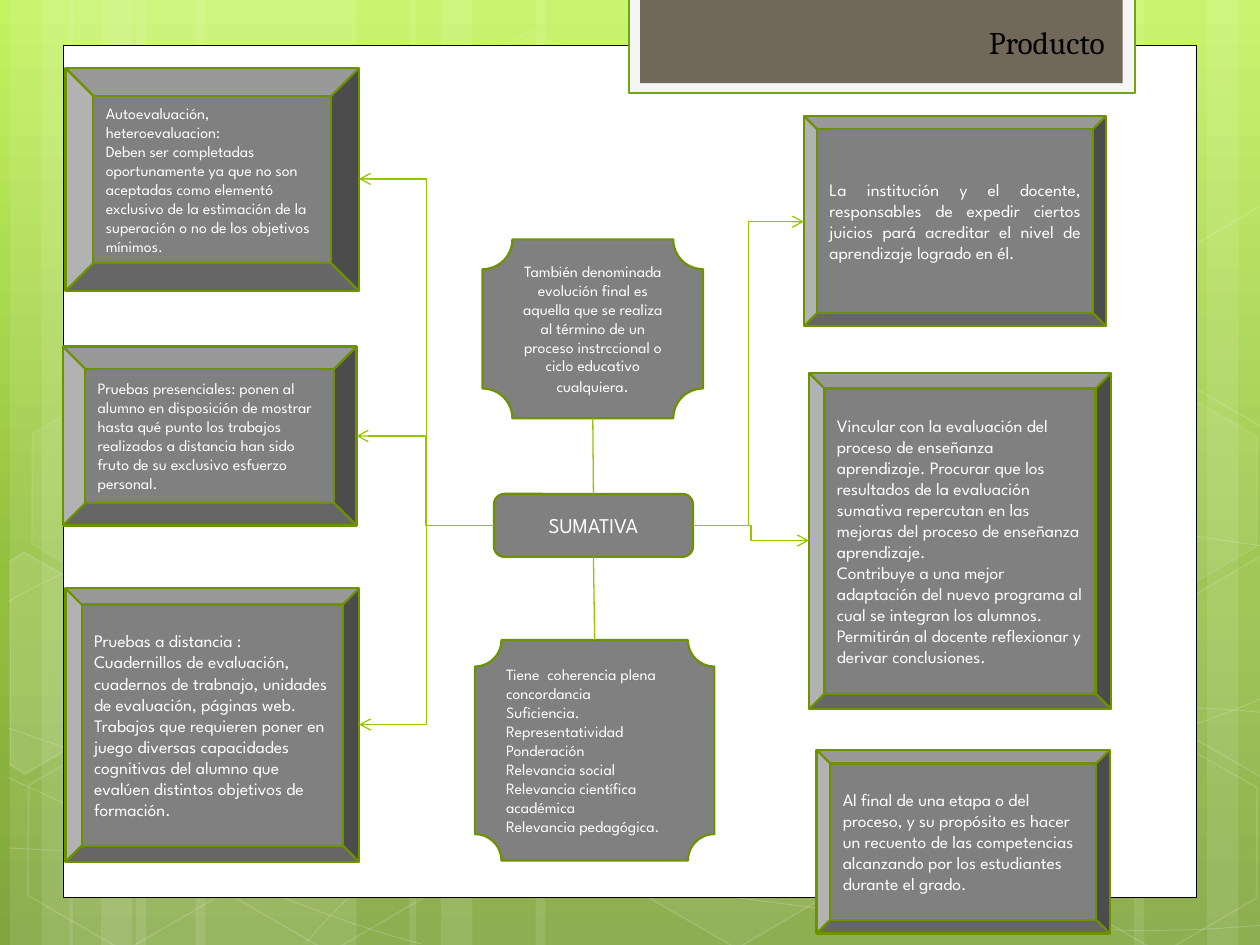
from copy import deepcopy
from math import cos, radians, sin
from lxml.etree import SubElement as Sub
from pptx import Presentation
from pptx.dml.color import RGBColor as RGB
from pptx.enum.shapes import MSO_CONNECTOR as Link, MSO_SHAPE as Kind
from pptx.enum.text import MSO_ANCHOR as Anchor, MSO_AUTO_SIZE as Fit, PP_ALIGN as Align
from pptx.oxml.ns import qn
from pptx.util import Inches, Pt

WHITE, GRAY, GREEN, LIME = "FFFFFF", "808080", "6D9200", "94C600"
SANS = "League Spartan"
TILT = 30

BANDS = [(1.08, 1.75), (0.08, 0.5), (0.33, 0.83), (1.55, 1.75), (0.55, 0.5), (0.8, 0.83),
         (7.33, 1.75), (9.58, 0.5), (9, 0.83), (4.25, 3.08), (3.25, 0.5), (3.5, 0.83)]

CURVES = [
    ([(0.07, 6.73), (0.61, 6.76), (1.15, 6.79), (1.9, 6.78), (2.65, 6.77), (3.58, 6.75),
      (4.58, 6.65), (5.58, 6.55), (7, 6.36), (7.92, 6.17), (8.83, 5.98), (9.77, 5.68),
      (10.07, 5.51)], None),
    ([(0.07, 4.77), (0.36, 4.61), (0.65, 4.46), (1.21, 4.31), (1.78, 4.16), (2.59, 3.94),
      (3.47, 3.87), (4.36, 3.8), (5.44, 3.79), (6.54, 3.87), (7.64, 3.95), (9.47, 4.26),
      (10.07, 4.34)], None),
    ([(0.06, 6.17), (1.27, 6.72), (2.47, 7.27), (3.34, 7.49)], None),
    ([(0.07, 5.78), (0.38, 5.89), (0.7, 6), (1.28, 6.16), (1.86, 6.31), (2.73, 6.56),
      (3.57, 6.73), (4.4, 6.9), (5.45, 7.08), (6.28, 7.18), (7.11, 7.29), (8, 7.33),
      (8.53, 7.36), (9.05, 7.4), (9.19, 7.38), (9.45, 7.38), (9.71, 7.37), (9.89, 7.35),
      (10.07, 7.34)], None),
    ([(2.42, 7.49), (2.6, 7.29), (2.78, 7.09), (3.02, 6.91), (3.26, 6.73), (3.6, 6.53),
      (3.88, 6.39), (4.16, 6.25), (4.33, 6.19), (4.7, 6.09), (5.06, 5.99), (5.73, 5.85),
      (6.08, 5.78), (6.44, 5.71), (6.49, 5.71), (6.8, 5.69), (7.11, 5.66), (7.6, 5.63),
      (7.94, 5.62), (8.29, 5.61), (8.86, 5.62), (8.86, 5.62), (9.53, 5.62), (9.71, 5.63),
      (9.88, 5.64), (9.97, 5.65), (10.06, 5.66), (10.03, 5.65), (10.06, 5.66)], 21),
]

HEXES = [(3.34, 0.36, 4, 8), (4.97, 5.89, 6, 12), (0.11, 5.91, None, 12), (0.14, 3.12, 7, 8),
         (1.74, 5.92, None, 12), (7.53, 4.53, 10, 12), (8.34, 5.93, None, 12),
         (8.34, 3.14, 7, 8)]

CUTS = [
    ((0.36, 5.35), [(0.08, 4.45), (0.19, 4.38), (0.96, 4.82), (0.95, 5.7), (0.2, 6.14),
                    (0.08, 6.07)], 10),
    ((9.85, 5.2), [(9.26, 4.85), (10.01, 4.41), (10.09, 4.46), (10.09, 6.13),
                   (10.02, 6.17), (9.26, 5.73)], 4),
    ((9.85, 2.41), [(9.26, 2.07), (10.01, 1.63), (10.1, 1.68), (10.09, 3.35),
                    (10.02, 3.39), (9.26, 2.95)], None),
]

BEVELS = [
    ((0.52, 0.54, 2.33, 1.77), 0.125, 9, [
        "Autoevaluación, heteroevaluacion:",
        "Deben ser completadas oportunamente ya que no son aceptadas como elementó exclusivo "
        "de la estimación de la superación o no de los objetivos mínimos."]),
    ((0.5, 2.75, 2.33, 1.42), 0.125, 9, [
        "Pruebas presenciales: ponen al alumno en disposición de mostrar hasta qué punto los "
        "trabajos realizados a distancia han sido fruto de su exclusivo esfuerzo personal."]),
    ((0.52, 4.67, 2.33, 2.17), 0.059, 10, [
        "Pruebas a distancia :",
        "Cuadernillos de evaluación, cuadernos de trabnajo, unidades de evaluación, páginas "
        "web. Trabajos que requieren poner en juego diversas capacidades cognitivas del "
        "alumno que evalúen distintos objetivos de formación."]),
    ((6.48, 5.95, 2.33, 1.46), 0.076, 10, [
        "Al final de una etapa o del proceso, y su propósito es hacer un recuento de las "
        "competencias alcanzando por los estudiantes durante el grado."]),
    ((6.42, 2.96, 2.4, 2.67), 0.052, 10, [
        "Vincular con la evaluación del proceso de enseñanza aprendizaje. Procurar que los "
        "resultados de la evaluación sumativa repercutan en las mejoras del proceso de "
        "enseñanza aprendizaje.",
        "Contribuye a una mejor adaptación del nuevo programa al cual se integran los alumnos.",
        "Permitirán al docente reflexionar y derivar conclusiones."]),
]
DUTY = ["La institución y el docente, responsables de expedir ciertos juicios pará acreditar "
        "el nivel de aprendizaje logrado en él."]
FINAL = ["También denominada evolución final es aquella que se realiza al término de un "
         "proceso instrccional o ciclo educativo cualquiera"]
TRAITS = ["Tiene  coherencia plena concordancia", "Suficiencia.", "Representatividad",
          "Ponderación", "Relevancia social", "Relevancia científica académica",
          "Relevancia pedagógica."]


def paint(fill, hue):
    fill.solid()
    fill.fore_color.rgb = RGB.from_string(hue)


def fade(node, pct):
    Sub(node.find(".//" + qn("a:srgbClr")), qn("a:alpha"), val=str(pct * 1000))


def dress(item, fill=None, line=None, width=1, clear=None, dim=None):
    item.shadow.inherit = False
    props = item._element.spPr
    if fill:
        paint(item.fill, fill)
        if clear:
            fade(props.find(qn("a:solidFill")), clear)
    else:
        item.fill.background()
    if line:
        paint(item.line.fill, line)
        item.line.width = Pt(width)
        if dim:
            fade(props.find(qn("a:ln")), dim)
    else:
        item.line.fill.background()
    return item


def shape(slide, kind, at, adj=(), **look):
    item = slide.shapes.add_shape(kind, *map(Inches, at))
    for i, val in enumerate(adj):
        item.adjustments[i] = val
    return dress(item, **look)


def trace(slide, dots, close, **look):
    dots = [(Inches(x), Inches(y)) for x, y in dots]
    pen = slide.shapes.build_freeform(*dots[0])
    pen.add_line_segments(dots[1:], close=close)
    return dress(pen.convert_to_shape(), **look)


def bend(item, flat):
    legs = list(item._element.iter(qn("a:lnTo")))
    if flat is not None:
        legs.pop(flat)
    for i in range(0, len(legs), 3):
        first, *rest = legs[i:i + 3]
        first.tag = qn("a:cubicBezTo")
        for leg in rest:
            first.append(leg[0])
            leg.getparent().remove(leg)


def turn(dots, mid, deg):
    c, s = cos(radians(deg)), sin(radians(deg))
    gaps = [(x - mid[0], y - mid[1]) for x, y in dots]
    return [(mid[0] + x * c - y * s, mid[1] + x * s + y * c) for x, y in gaps]


def style(run, size, face=SANS, hue=WHITE):
    for name, val in {"size": Pt(size), "name": face}.items():
        setattr(run.font, name, val)
    run.font.color.rgb = RGB.from_string(hue)


def write(item, paras, size, align=Align.LEFT, **look):
    frame = item.text_frame
    for name, val in {"word_wrap": True, "vertical_anchor": Anchor.MIDDLE}.items():
        setattr(frame, name, val)
    for i, text in enumerate(paras):
        para = frame.add_paragraph() if i else frame.paragraphs[0]
        para.alignment = align
        run = para.add_run()
        run.text = text
        style(run, size, **look)


def box(slide, kind, at, paras, size, align=Align.LEFT, adj=()):
    item = shape(slide, kind, at, adj, fill=GRAY, line=GREEN, width=1.25)
    write(item, paras, size, align)
    return item


def link(slide, kind, start, end, arrow=False):
    wire = slide.shapes.add_connector(kind, *map(Inches, start + end))
    wire.line.color.rgb = RGB.from_string(LIME)
    wire.line.width = Pt(0.75)
    props = wire._element.spPr
    if arrow:
        Sub(props.find(qn("a:ln")), qn("a:tailEnd"), type="arrow")
    Sub(props, qn("a:effectLst"))
    return wire


def scene(slide):
    fill = slide.background.fill
    fill.gradient()
    fill.gradient_angle = 270
    stops = slide._element.find(".//" + qn("a:gsLst"))
    stops.append(deepcopy(stops[0]))
    hues = [(0, "C3F35F"), (0.62, "93BF3F"), (1, "81A53E")]
    for stop, (pos, hue) in zip(fill.gradient_stops, hues):
        stop.position = pos
        stop.color.rgb = RGB.from_string(hue)
    for x, w in BANDS:
        shape(slide, Kind.RECTANGLE, (x, 0, w, 7.5), fill=WHITE, clear=10)
    for dots, flat in CURVES:
        bend(trace(slide, dots, False, line=WHITE, width=0.5, dim=20), flat)
    for x, y, clear, dim in HEXES:
        item = shape(slide, Kind.HEXAGON, (x, y, 1.75, 1.52), (0.285, 1.155),
                     fill=clear and WHITE, clear=clear, line=WHITE, dim=dim)
        item.rotation = TILT
    for mid, dots, clear in CUTS:
        item = trace(slide, turn(dots, mid, -TILT), True, fill=clear and WHITE, clear=clear,
                     line=WHITE, dim=12)
        item.rotation = TILT
    shape(slide, Kind.RECTANGLE, (0.5, 0.36, 9, 6.76), fill=WHITE, line="000000", width=0.5)
    shape(slide, Kind.RECTANGLE, (4.99, -0.02, 4.02, 0.76), fill="F5F5F5", line="74A510",
          width=1.25)
    shape(slide, Kind.RECTANGLE, (5.08, -0.02, 3.83, 0.68), fill="71685A")


def main():
    deck = Presentation()
    deck.slide_width, deck.slide_height = Inches(10), Inches(7.5)
    slide = deck.slides.add_slide(deck.slide_layouts[6])
    scene(slide)
    hub = box(slide, Kind.ROUNDED_RECTANGLE, (3.92, 3.92, 1.58, 0.5), ["SUMATIVA"], 12,
              Align.CENTER)
    top = box(slide, Kind.PLAQUE, (3.83, 1.9, 1.75, 1.42), FINAL, 9, Align.CENTER)
    dot = top.text_frame.paragraphs[0].add_run()
    dot.text = "."
    style(dot, 10)
    low = box(slide, Kind.PLAQUE, (3.77, 5.08, 1.9, 1.75), TRAITS, 9, adj=[0.12])
    for at, adj, size, paras in BEVELS:
        box(slide, Kind.BEVEL, at, paras, size, adj=[adj])
    box(slide, Kind.BEVEL, (6.38, 0.92, 2.4, 1.67), DUTY, 10, Align.JUSTIFY, [0.063])
    for side, x, end in [(1, 3.92, (2.85, 1.42)), (1, 3.92, (2.83, 3.46)),
                         (1, 3.92, (2.85, 5.75)), (3, 5.5, (6.38, 1.76)),
                         (3, 5.5, (6.42, 4.29))]:
        link(slide, Link.ELBOW, (x, 4.17), end, True).begin_connect(hub, side)
    for a, b, start, end in [(top, hub, (4.71, 3.32), (4.71, 3.92)),
                             (hub, low, (4.71, 4.42), (4.72, 5.08))]:
        wire = link(slide, Link.STRAIGHT, start, end)
        wire.begin_connect(a, 2)
        wire.end_connect(b, 0)
    title = slide.shapes.add_textbox(*map(Inches, (7.75, 0.13, 1.67, 0.4)))
    write(title, ["Producto"], 18, face="Cambria", hue="000000")
    title.text_frame.vertical_anchor = Anchor.TOP
    title.text_frame.auto_size = Fit.SHAPE_TO_FIT_TEXT
    deck.save("out.pptx")


if __name__ == "__main__":
    main()
